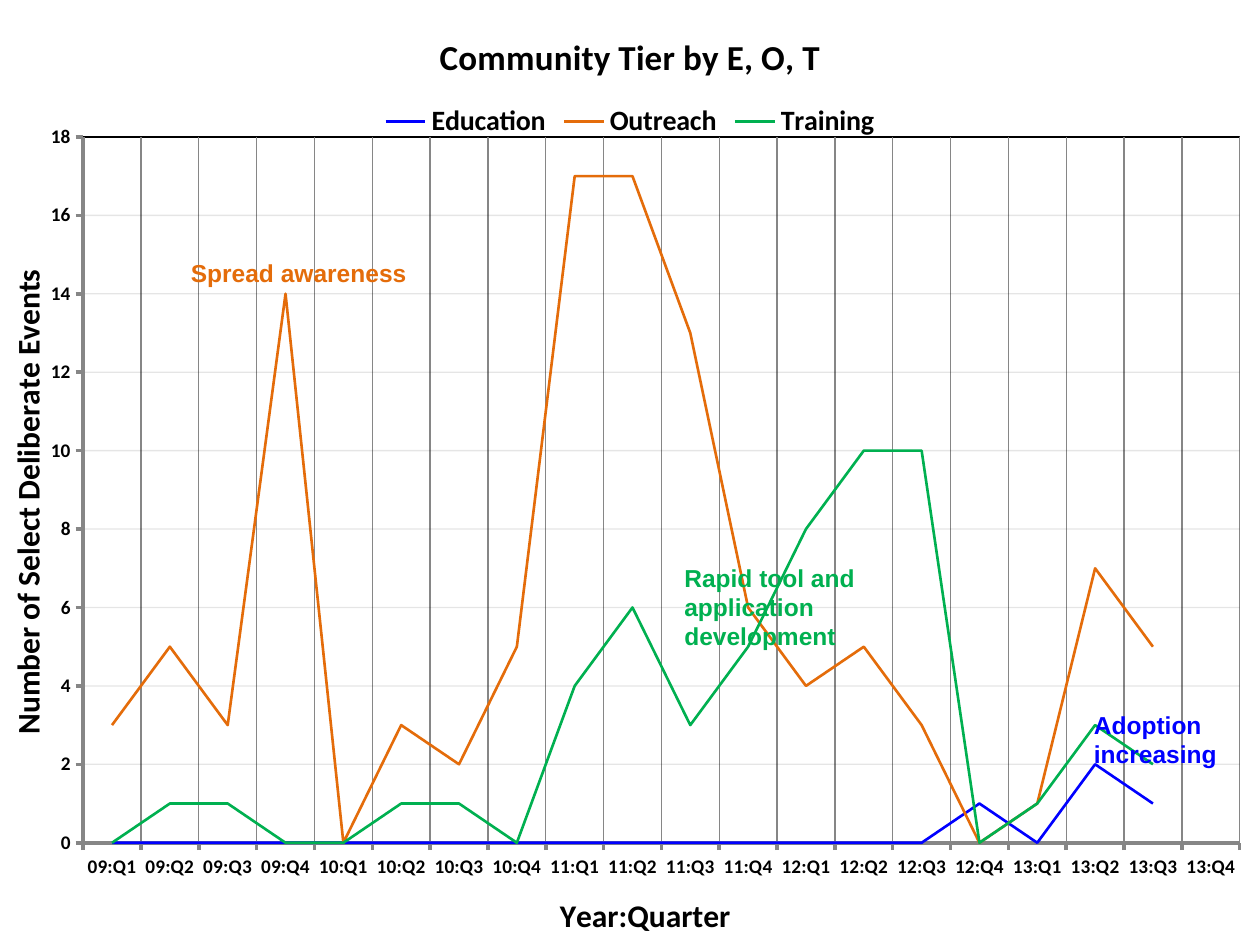
from dataclasses import dataclass
from pptx import Presentation
from pptx.chart.data import CategoryChartData
from pptx.dml.color import RGBColor
from pptx.enum.chart import XL_CHART_TYPE, XL_LEGEND_POSITION, XL_TICK_MARK
from pptx.oxml import parse_xml
from pptx.oxml.ns import nsdecls
from pptx.util import Pt


@dataclass(frozen=True)
class Theme:
    face: str = "Calibri"
    note: str = "Arial"
    black: str = "000000"
    gray: str = "868686"
    blue: str = "0000FF"
    orange: str = "E46C0A"
    green: str = "00B050"
    head: int = 20
    axis: int = 18
    key: int = 16
    label: int = 14
    tick: int = 11
    base: int = 10


class Deck:
    def __init__(self, theme, width, height):
        self.theme = theme
        self.file = Presentation()
        self.file.slide_width, self.file.slide_height = Pt(width), Pt(height)
        self.slide = self.file.slides.add_slide(self.file.slide_layouts[6])

    def style(self, font, size, color, face=None, bold=True):
        font.name = face or self.theme.face
        font.size = Pt(size)
        font.bold = bold
        font.color.rgb = RGBColor.from_string(color)

    def stroke(self, line, color, width):
        line.color.rgb = RGBColor.from_string(color)
        line.width = Pt(width)

    def title(self, owner, text, size):
        frame = owner.text_frame
        frame.text = text
        self.style(frame.paragraphs[0].runs[0].font, size, self.theme.black)

    def axis(self, axis, text, grid):
        self.title(axis.axis_title, text, self.theme.axis)
        self.style(axis.tick_labels.font, self.theme.tick, self.theme.black)
        self.stroke(axis.format.line, self.theme.gray, 2)
        axis.major_tick_mark = XL_TICK_MARK.OUTSIDE
        axis.minor_tick_mark = XL_TICK_MARK.NONE
        axis.has_major_gridlines = True
        self.stroke(axis.major_gridlines.format.line, grid, 0.75)

    def frame(self, chart, box):
        plot = chart.element.xpath(".//c:plotArea")[0]
        for old in plot.xpath("./c:layout"):
            plot.remove(old)
        sides = "".join(f'<c:{k} val="{v}"/>' for k, v in zip("xywh", box))
        plot.insert(0, parse_xml(
            f'<c:layout {nsdecls("c")}><c:manualLayout>'
            '<c:layoutTarget val="inner"/><c:xMode val="edge"/>'
            f'<c:yMode val="edge"/>{sides}</c:manualLayout></c:layout>'))
        plot.append(parse_xml(
            f'<c:spPr {nsdecls("c", "a")}><a:noFill/><a:ln w="9525"><a:solidFill>'
            f'<a:srgbClr val="{self.theme.black}"/></a:solidFill></a:ln></c:spPr>'))
        grid = chart.element.xpath(".//c:valAx/c:majorGridlines//a:srgbClr")[0]
        grid.append(parse_xml(f'<a:alpha {nsdecls("a")} val="10000"/>'))

    def chart(self, box, head, names, cats, series):
        data = CategoryChartData()
        data.categories = cats
        for name, color, vals in series:
            data.add_series(name, vals)
        chart = self.slide.shapes.add_chart(
            XL_CHART_TYPE.LINE, *map(Pt, box), data).chart
        self.style(chart.font, self.theme.base, self.theme.black, bold=False)
        chart.has_title = True
        self.title(chart.chart_title, head, self.theme.head)
        chart.has_legend = True
        chart.legend.position = XL_LEGEND_POSITION.TOP
        chart.legend.include_in_layout = False
        self.style(chart.legend.font, self.theme.key, self.theme.black)
        self.axis(chart.category_axis, names[0], self.theme.gray)
        self.axis(chart.value_axis, names[1], self.theme.black)
        chart.value_axis.minimum_scale = 0
        chart.value_axis.maximum_scale = 18
        chart.value_axis.major_unit = 2
        chart.plots[0].vary_by_categories = False
        for line, (name, color, vals) in zip(chart.plots[0].series, series):
            line.smooth = False
            self.stroke(line.format.line, color, 1.5)
        self.frame(chart, (0.066, 0.145, 0.918, 0.747))

    def label(self, box, text, color):
        frame = self.slide.shapes.add_textbox(*map(Pt, box)).text_frame
        frame.word_wrap = True
        frame.text = text
        self.style(frame.paragraphs[0].runs[0].font, self.theme.label,
                   color, self.theme.note)


def main():
    theme = Theme()
    deck = Deck(theme, 720, 540)
    cats = [f"{year:02}:Q{part}" for year in range(9, 14) for part in range(1, 5)]
    series = [
        ("Education", theme.blue, [0] * 15 + [1, 0, 2, 1, None]),
        ("Outreach", theme.orange,
         [3, 5, 3, 14, 0, 3, 2, 5, 17, 17, 13, 6, 4, 5, 3, 0, 1, 7, 5, None]),
        ("Training", theme.green,
         [0, 1, 1, 0, 0, 1, 1, 0, 4, 6, 3, 5, 8, 10, 10, 0, 1, 3, 2, None]),
    ]
    names = ("Year:Quarter", "Number of Select Deliberate Events")
    deck.chart((0, 0, 720, 540), "Community Tier by E, O, T", names, cats, series)
    deck.label((384, 318, 144, 58), "Rapid tool and application development",
               theme.green)
    deck.label((618, 402, 90, 41), "Adoption increasing", theme.blue)
    deck.label((102, 144, 150, 24.5), "Spread awareness", theme.orange)
    deck.file.save("out.pptx")


if __name__ == "__main__":
    main()
